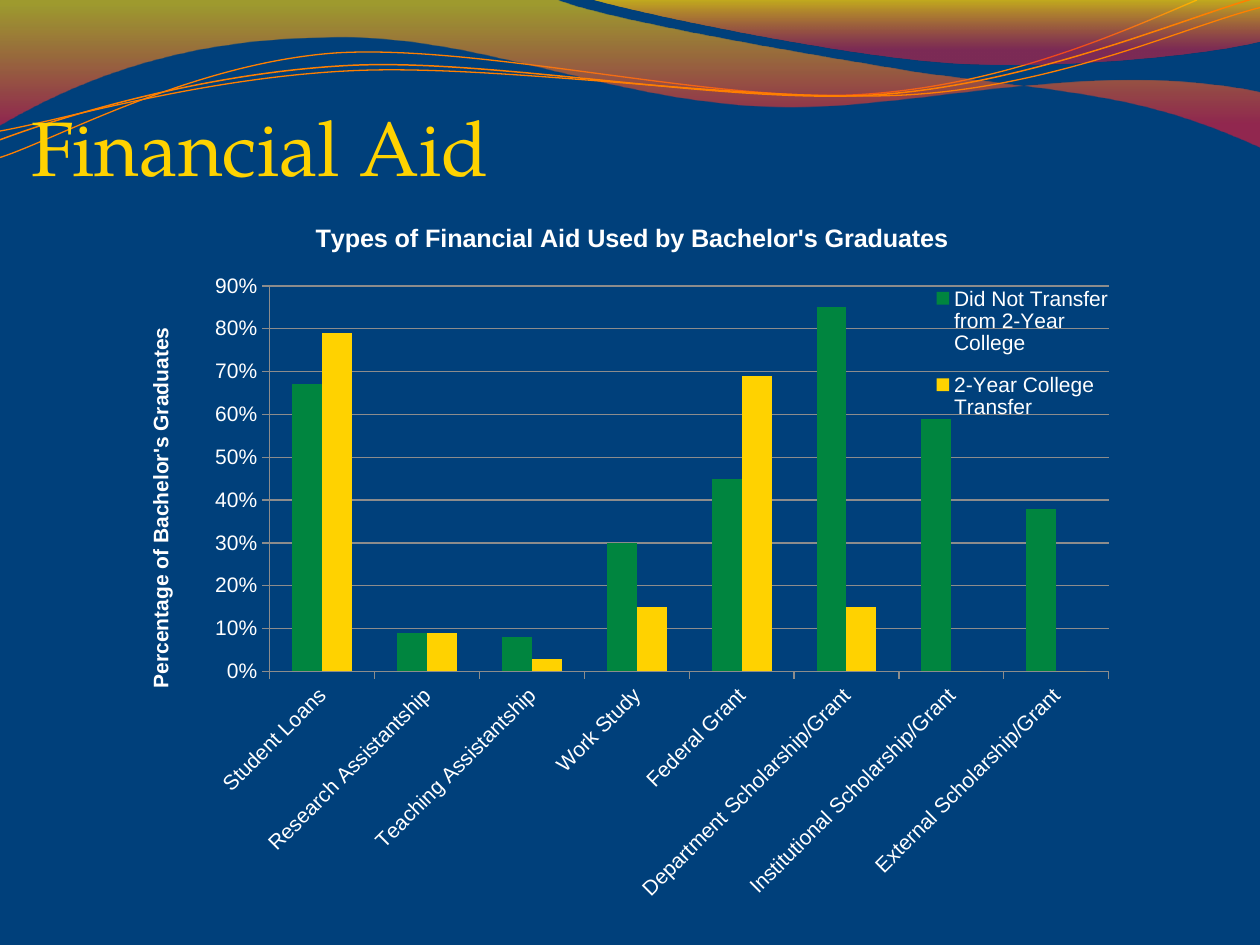
import pptx
import pptx.chart.data
import pptx.dml.color
import pptx.enum.chart
import pptx.enum.text
import pptx.oxml
import pptx.oxml.ns
import pptx.util
from pptx.util import Inches

THEME = {
    "background": "00407B", "title": "FFD200", "text": "FFFFFF",
    "line": "FF7F00", "grid": "8C8C8C", "wave_top": "FFD200", "wave_bottom": "E31936",
    "title_font": "TeX Gyre Pagella", "chart_font": "Arial",
    "title_size": 44, "chart_title_size": 14.4, "chart_size": 12,
}
TITLE = "Financial Aid"
CHART_TITLE = "Types of Financial Aid Used by Bachelor's Graduates"
AXIS_TITLE = "Percentage of Bachelor's Graduates"
CATEGORIES = [
    "Student Loans", "Research Assistantship", "Teaching Assistantship", "Work Study",
    "Federal Grant", "Department Scholarship/Grant", "Institutional Scholarship/Grant",
    "External Scholarship/Grant",
]
SERIES = [
    ("Did Not Transfer from 2-Year College", "00853F",
     (0.67, 0.09, 0.08, 0.3, 0.45, 0.85, 0.59, 0.38)),
    ("", "78AA44", ()),
    ("2-Year College Transfer", "FFD200", (0.79, 0.09, 0.03, 0.15, 0.69, 0.15, 0, 0)),
]
CHART_BOX = (1.09, 1.57, 7.85, 5.7)
WAVES = [
    {"stops": [(0.04, 61), (0.84, 63)], "segments": [
        (0, 0), (4.4, -0.01), (4.76, 0.15, 6.4, 0.43, 7.33, 0.58),
        (8.65, 0.75, 9.11, 0.77, 10, 1.17), (10, 1.25, 10, 0.79, 10, 0.73),
        (8.7, 0.46, 7.38, 0.84, 6.3, 0.85), (4.88, 0.85, 3.82, 0.25, 2.57, 0.3),
        (1.29, 0.31, 0.46, 0.73, -0.01, 1), (-0.01, 0.67, 0, 0.33, 0, 0)]},
    {"stops": [(0, 77), (0.8, 54)], "segments": [
        (4.67, -0.01), (4.98, 0.09, 6.64, 0.44, 7.53, 0.5),
        (8.41, 0.56, 9.61, 0.43, 10, 0.33), (10, 0), (4.67, -0.01)]},
]
STRANDS = [
    {"width": 0.75, "segments": [
        (0, 1.25), (0.44, 1.11, 1.53, 0.5, 2.67, 0.42),
        (3.83, 0.35, 5.69, 0.82, 6.83, 0.75), (7.97, 0.68, 8.91, 0.25, 9.5, 0)]},
    {"width": 0.85, "segments": [
        (0, 1.11), (0.48, 0.93, 1.6, 0.58, 2.77, 0.52),
        (3.93, 0.46, 5.8, 0.84, 7, 0.75), (8.2, 0.66, 9.38, 0.15, 9.98, -0.02)]},
    {"width": 0.75, "segments": [
        (0, 1.04), (0.47, 0.96, 1.62, 0.61, 2.83, 0.56),
        (4.04, 0.51, 6.06, 0.83, 7.25, 0.75), (8.44, 0.67, 9.41, 0.21, 10, 0.06)]},
]


def rgb(name):
    return pptx.dml.color.RGBColor.from_string(THEME.get(name, name))


def style_font(font, size, color="text", face="chart_font", bold=False):
    font.size = pptx.util.Pt(THEME[size])
    font.name = THEME[face]
    font.bold = bold
    font.color.rgb = rgb(color)


def add_outline(page, segments, closed):
    ends = [(Inches(segment[-2]), Inches(segment[-1])) for segment in segments]
    builder = page.shapes.build_freeform(*ends[0])
    builder.add_line_segments(ends[1:], close=closed)
    shape = builder.convert_to_shape()
    shape.shadow.inherit = False
    lines = list(shape._element.spPr.iter(pptx.oxml.ns.qn("a:lnTo")))
    for line, segment in zip(lines, segments[1:]):
        if len(segment) == 6:
            points = "".join(
                f'<a:pt x="{Inches(x) - shape.left}" y="{Inches(y) - shape.top}"/>'
                for x, y in zip(segment[::2], segment[1::2]))
            line.getparent().replace(line, pptx.oxml.parse_xml(
                f'<a:cubicBezTo {pptx.oxml.ns.nsdecls("a")}>{points}</a:cubicBezTo>'))
    return shape


def add_wave(page, wave):
    shape = add_outline(page, wave["segments"], True)
    shape.line.fill.background()
    shape.fill.gradient()
    shape.fill.gradient_angle = 270
    colors = ("wave_top", "wave_bottom")
    for stop, color, (position, opacity) in zip(shape.fill.gradient_stops, colors, wave["stops"]):
        stop.position = position
        stop.color.rgb = rgb(color)
    tag = pptx.oxml.ns.qn("a:srgbClr")
    for element, (position, opacity) in zip(shape._element.spPr.iter(tag), wave["stops"]):
        element.append(pptx.oxml.parse_xml(
            f'<a:alpha {pptx.oxml.ns.nsdecls("a")} val="{opacity * 1000}"/>'))


def add_strand(page, strand):
    shape = add_outline(page, strand["segments"], False)
    shape.fill.background()
    shape.line.color.rgb = rgb("line")
    shape.line.width = pptx.util.Pt(strand["width"])


def place(element, index, x, y, w=None, h=None, inner=False):
    for old in element.findall(pptx.oxml.ns.qn("c:layout")):
        element.remove(old)
    left, top, width, height = CHART_BOX
    parts = '<c:layoutTarget val="inner"/>' if inner else ""
    parts += '<c:xMode val="edge"/><c:yMode val="edge"/>'
    parts += f'<c:x val="{(x - left) / width}"/><c:y val="{(y - top) / height}"/>'
    if w is not None:
        parts += f'<c:w val="{w / width}"/><c:h val="{h / height}"/>'
    element.insert(index, pptx.oxml.parse_xml(
        f'<c:layout {pptx.oxml.ns.nsdecls("c")}>'
        f'<c:manualLayout>{parts}</c:manualLayout></c:layout>'))


def set_title(title, text, size, x, y):
    title.text_frame.text = text
    style_font(title.text_frame.paragraphs[0].runs[0].font, size, bold=True)
    place(title._element, 1, x, y)


def add_title(page):
    box = page.shapes.add_textbox(Inches(0.25), Inches(0.73), Inches(9.5), Inches(0.79))
    frame = box.text_frame
    frame.word_wrap = True
    frame.vertical_anchor = pptx.enum.text.MSO_ANCHOR.BOTTOM
    frame.margin_left = frame.margin_right = frame.margin_bottom = 0
    frame.text = TITLE
    style_font(frame.paragraphs[0].runs[0].font, "title_size", "title", "title_font")


def add_aid_chart(page):
    data = pptx.chart.data.CategoryChartData(number_format="0%")
    data.categories = CATEGORIES
    for name, color, values in SERIES:
        data.add_series(name, values)
    kinds = pptx.enum.chart
    chart = page.shapes.add_chart(
        kinds.XL_CHART_TYPE.COLUMN_CLUSTERED, *map(Inches, CHART_BOX), data).chart
    style_font(chart.font, "chart_size")
    chart.has_title = True
    set_title(chart.chart_title, CHART_TITLE, "chart_title_size", 2.47, 1.73)
    plot = chart.plots[0]
    plot.gap_width = 150
    plot.overlap = 0
    plot.vary_by_categories = False
    for series, (name, color, values) in zip(plot.series, SERIES):
        series.format.fill.solid()
        series.format.fill.fore_color.rgb = rgb(color)
        if not values:
            for tag in ("c:tx", "c:val"):
                series._element.remove(series._element.find(pptx.oxml.ns.qn(tag)))
    value_axis, category_axis = chart.value_axis, chart.category_axis
    value_axis.minimum_scale, value_axis.maximum_scale = 0, 0.9
    value_axis.major_unit = 0.1
    value_axis.tick_labels.number_format = "0%"
    value_axis.tick_labels.number_format_is_linked = False
    value_axis.has_title = True
    set_title(value_axis.axis_title, AXIS_TITLE, "chart_size", 1.14, 2.57)
    body = value_axis.axis_title.text_frame._txBody.bodyPr
    body.set("rot", "-5400000")
    body.set("vert", "horz")
    for axis in (value_axis, category_axis):
        axis.major_tick_mark = kinds.XL_TICK_MARK.OUTSIDE
        style_font(axis.tick_labels.font, "chart_size")
    for part in (value_axis, category_axis, value_axis.major_gridlines):
        part.format.line.color.rgb = rgb("grid")
        part.format.line.width = pptx.util.Pt(0.75)
    category_axis._element.txPr.bodyPr.set("rot", "-2700000")
    chart.has_legend = True
    chart.legend.position = kinds.XL_LEGEND_POSITION.RIGHT
    chart.legend.include_in_layout = True
    style_font(chart.legend.font, "chart_size")
    place(chart.legend._element, 1, 7.41, 2.13, 1.41, 1.35)
    place(chart._chartSpace.chart.plotArea, 0, 2.14, 2.27, 6.66, 3.06, inner=True)


def main():
    deck = pptx.Presentation()
    deck.slide_width, deck.slide_height = Inches(10), Inches(7.5)
    page = deck.slides.add_slide(deck.slide_layouts[6])
    page.background.fill.solid()
    page.background.fill.fore_color.rgb = rgb("background")
    add_strand(page, STRANDS[0])
    for wave in WAVES:
        add_wave(page, wave)
    for strand in STRANDS[1:]:
        add_strand(page, strand)
    add_title(page)
    add_aid_chart(page)
    deck.save("out.pptx")


if __name__ == "__main__":
    main()
